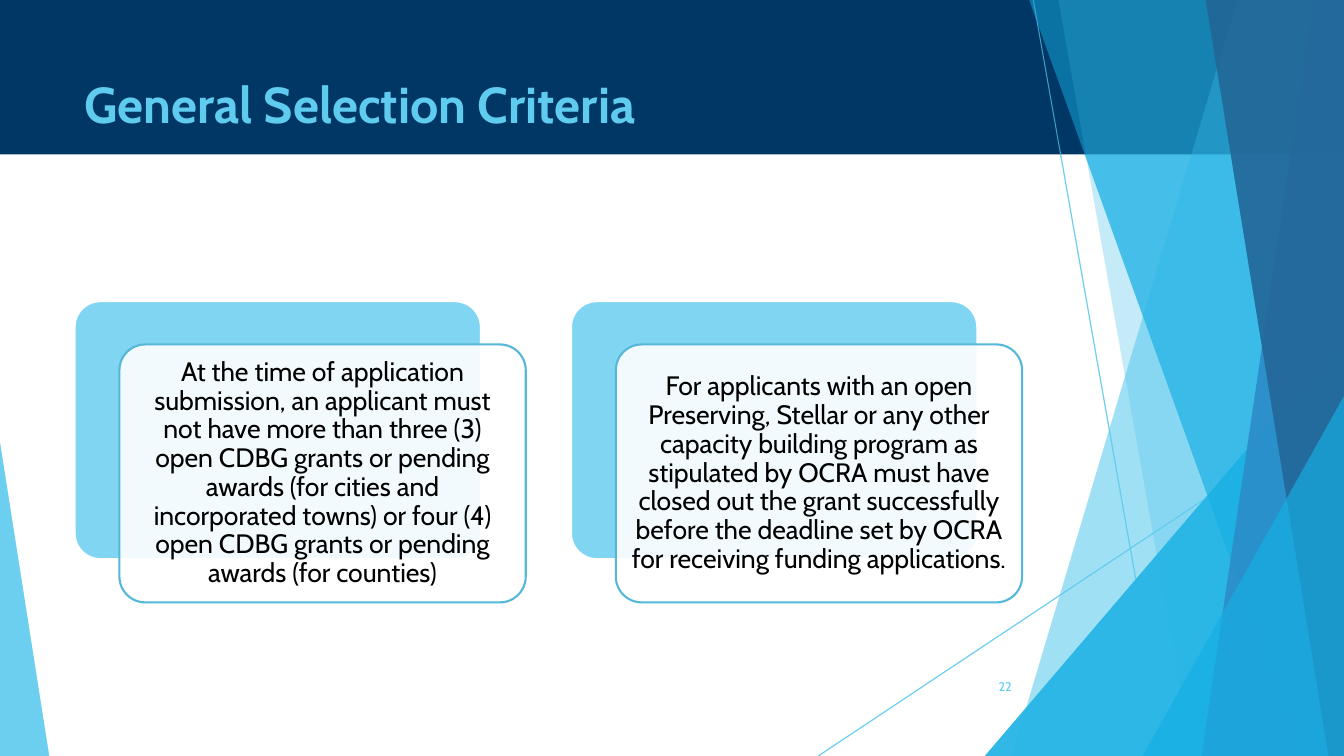
from lxml import etree
from pptx import Presentation
from pptx.dml.color import RGBColor
from pptx.enum.shapes import MSO_CONNECTOR, MSO_SHAPE
from pptx.enum.text import MSO_ANCHOR, MSO_AUTO_SIZE, PP_ALIGN
from pptx.oxml.ns import qn
from pptx.util import Cm, Pt

RECT = MSO_SHAPE.RECTANGLE
ROUNDED = MSO_SHAPE.ROUNDED_RECTANGLE
TRIANGLE = MSO_SHAPE.ISOSCELES_TRIANGLE
STRAIGHT = MSO_CONNECTOR.STRAIGHT
TOP, MIDDLE = MSO_ANCHOR.TOP, MSO_ANCHOR.MIDDLE
LEFT, CENTER, RIGHT = PP_ALIGN.LEFT, PP_ALIGN.CENTER, PP_ALIGN.RIGHT
NO_AUTOFIT = MSO_AUTO_SIZE.NONE

WIDTH, HEIGHT, BLEED = 33.87, 19.05, -0.02
FONT = "Cabin"
SKY, AZURE, BLUE, STEEL = "5FCBEF", "17B0E4", "2E83C3", "226292"
NAVY, EDGE, WHITE, BLACK = "003764", "56B8D9", "FFFFFF", "000000"

CRITERIA = [
    "At the time of application submission, an applicant must not have more "
    "than three (3) open CDBG grants or pending awards (for cities and "
    "incorporated towns) or four (4) open CDBG grants or pending awards "
    "(for counties)",
    "For applicants with an open Preserving, Stellar or any other capacity "
    "building program as stipulated by OCRA must have closed out the grant "
    "successfully before the deadline set by OCRA for receiving funding "
    "applications.",
]


def set_color(color, hex_color, alpha=100):
    color.rgb = RGBColor.from_string(hex_color)


def paint(fill, hex_color, parent, alpha=100):
    """Solid colour; parent is the XML element that holds the solidFill."""
    fill.solid()
    fill.fore_color.rgb = RGBColor.from_string(hex_color)
    if alpha < 100:
        clr = parent.find(qn("a:solidFill")).find(qn("a:srgbClr"))
        etree.SubElement(clr, qn("a:alpha"), val=str(alpha * 1000))


def style(sp, fill, alpha=100, line=None):
    sp.shadow.inherit = False
    paint(sp.fill, fill, sp.element.spPr, alpha)
    if line:
        paint(sp.line.fill, line, sp.line._get_or_add_ln())
        sp.line.width = Pt(1.5)
    else:
        sp.line.fill.background()


def add_box(s, kind, box, fill, alpha=100, line=None, adj=None):
    sp = s.shapes.add_shape(kind, *map(Cm, box))
    if adj is not None:
        sp.adjustments[0] = adj
    style(sp, fill, alpha, line)
    return sp


def add_facet(s, top_x, bottom_x, fill, alpha):
    """Full-height panel from a slanted left side to the slide's right edge."""
    builder = s.shapes.build_freeform(Cm(top_x), Cm(BLEED))
    corners = [(WIDTH, BLEED), (WIDTH, HEIGHT), (bottom_x, HEIGHT)]
    builder.add_line_segments([(Cm(x), Cm(y)) for x, y in corners])
    style(builder.convert_to_shape(), fill, alpha)


def add_ray(s, *ends):
    ray = s.shapes.add_connector(STRAIGHT, *map(Cm, ends))
    ray.line.width = Pt(0.75)
    paint(ray.line.fill, SKY, ray.line._get_or_add_ln(), 70)
    etree.SubElement(ray.element.spPr, qn("a:effectLst"))


def set_text(sp, text, size, color, bold=False, align=LEFT, anchor=TOP,
             inset=(0.25, 0.13), spacing=1.0):
    tf = sp.text_frame
    tf.word_wrap = True
    tf.auto_size = NO_AUTOFIT
    tf.vertical_anchor = anchor
    tf.margin_left = tf.margin_right = Cm(inset[0])
    tf.margin_top = tf.margin_bottom = Cm(inset[1])
    p = tf.paragraphs[0]
    p.alignment = align
    p.line_spacing = spacing
    r = p.add_run()
    r.text = text
    r.font.name = FONT
    r.font.size = Pt(size)
    r.font.bold = bold
    r.font.color.rgb = RGBColor.from_string(color)


def add_facets(s):
    add_ray(s, 26.04, 0, 29.41, HEIGHT)
    add_ray(s, WIDTH, 10.24, 20.62, HEIGHT)
    add_facet(s, 31.19, 25.5, SKY, 36)
    add_facet(s, 26.67, 30.05, SKY, 20)
    add_box(s, TRIANGLE, (24.82, 8.46, 9.05, 10.59), AZURE, 66, adj=1)
    add_facet(s, 25.93, 32.79, AZURE, 50)
    add_facet(s, 33.1, 30.28, BLUE, 70)
    add_facet(s, 30.38, 33.48, STEEL, 80)
    add_box(s, TRIANGLE, (28.8, 9.98, 5.07, 9.07), AZURE, 66, adj=1)
    add_box(s, TRIANGLE, (0, 11.15, 1.24, 7.9), SKY, 70, adj=0)


def add_card(s, left, top, text):
    size = (10.24, 6.5)
    add_box(s, ROUNDED, (left, top, *size), SKY, 80, WHITE, adj=0.1)
    front = add_box(s, ROUNDED, (left + 1.13, top + 1.09, *size),
                    WHITE, 90, EDGE, adj=0.1)
    set_text(front, text, 19, BLACK, align=CENTER, anchor=MIDDLE,
             inset=(0.2, 0.2), spacing=0.9)


def main():
    prs = Presentation()
    prs.slide_width, prs.slide_height = Cm(WIDTH), Cm(HEIGHT)
    s = prs.slides.add_slide(prs.slide_layouts[5])

    # Background: facets lie both under and over the navy band
    add_facets(s)
    add_box(s, RECT, (0, BLEED, WIDTH, 3.91), NAVY)
    add_facets(s)

    # Title, brought in front of the band
    title = s.shapes.title
    title.left, title.top = Cm(1.88), Cm(1.7)
    title.width, title.height = Cm(23.88), Cm(3.66)
    set_text(title, "General Selection Criteria", 36, SKY, bold=True)
    title.element.getparent().append(title.element)

    # Slide number
    number = s.shapes.add_textbox(Cm(23.85), Cm(16.79), Cm(1.9), Cm(1.02))
    set_text(number, "22", 9, SKY, align=RIGHT, anchor=MIDDLE)

    # Criteria cards
    for i, text in enumerate(CRITERIA):
        add_card(s, 1.88 + i * 12.51, 7.59, text)

    prs.save("out.pptx")


if __name__ == "__main__":
    main()
